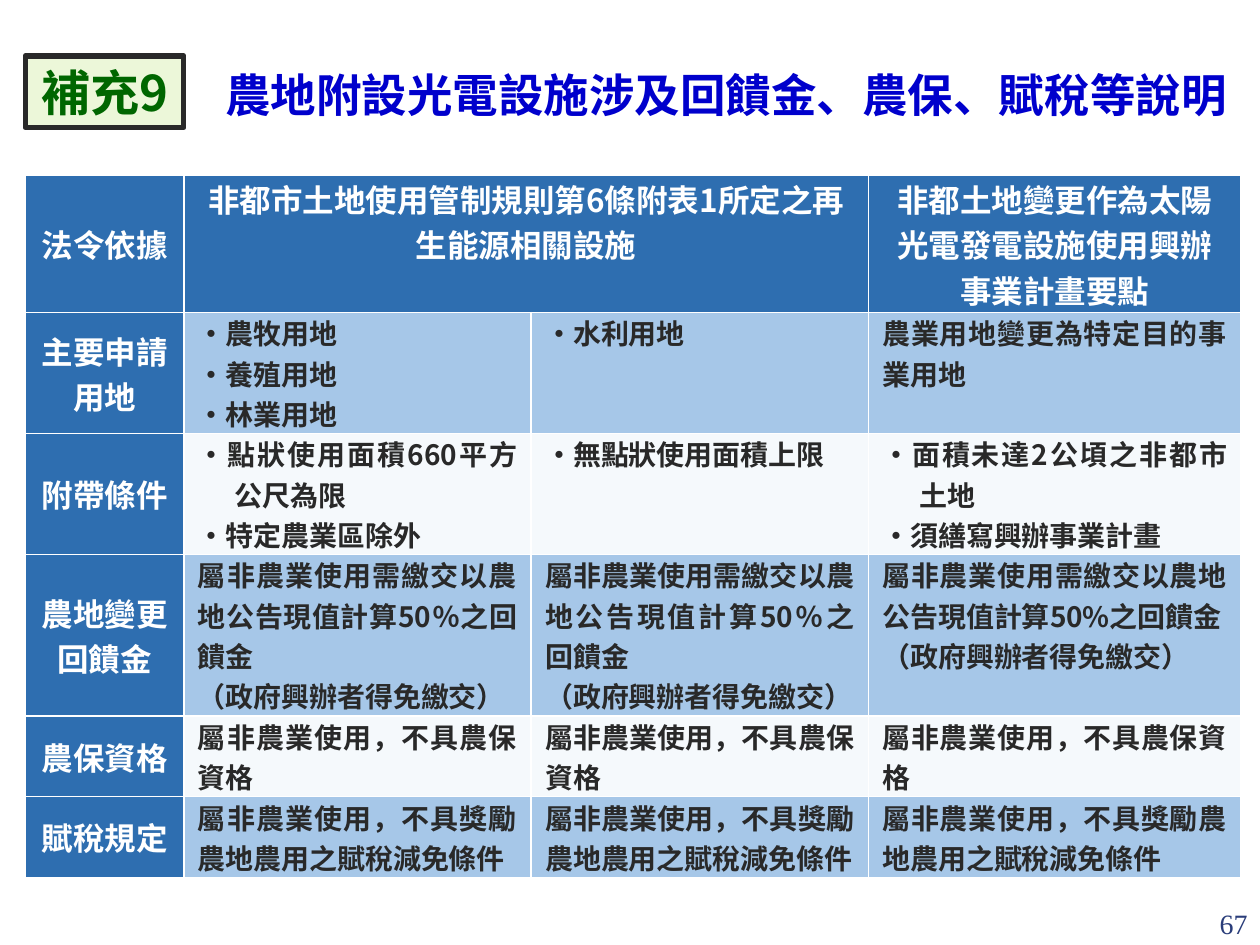
from pptx import Presentation
from pptx.dml.color import RGBColor
from pptx.enum.shapes import MSO_SHAPE
from pptx.enum.text import MSO_ANCHOR as ANCHOR, PP_ALIGN as ALIGN
from pptx.oxml.ns import qn
from pptx.util import Pt
from lxml.etree import SubElement

CJK, SERIF = "Noto Sans CJK SC", "Times New Roman"
WHITE = RGBColor(0xFF, 0xFF, 0xFF)
INK = RGBColor(0x29, 0x29, 0x29)
HEADER = RGBColor(0x2E, 0x6E, 0xB0)
BANDS = [RGBColor(0xF5, 0xF9, 0xFC), RGBColor(0xA6, 0xC7, 0xE8)]
TITLE = RGBColor(0x00, 0x00, 0xCC)
TAG_TEXT = RGBColor(0x00, 0x66, 0x00)
TAG_FILL = RGBColor(0xEC, 0xF7, 0xD9)
NUMBER = RGBColor(0x2A, 0x3D, 0x7A)

FEE = "屬非農業使用需繳交以農地公告現值計算{}之回饋金\n（政府興辦者得免繳交）"
INSURANCE = "屬非農業使用，不具農保資格"
TAX = "屬非農業使用，不具獎勵農地農用之賦稅減免條件"
ROWS = [
    ["法令依據", "非都市土地使用管制規則第6條附表1所定之再生能源相關設施", "",
     "非都土地變更作為太陽光電發電設施使用興辦事業計畫要點"],
    ["主要申請用地", "‧農牧用地\n‧養殖用地\n‧林業用地", "‧水利用地",
     "農業用地變更為特定目的事業用地"],
    ["附帶條件", "‧點狀使用面積660平方公尺為限\n‧特定農業區除外",
     "‧無點狀使用面積上限", "‧面積未達2公頃之非都市土地\n‧須繕寫興辦事業計畫"],
    ["農地變更回饋金", FEE.format("50％"), FEE.format("50％"), FEE.format("50%")],
    ["農保資格"] + [INSURANCE] * 3,
    ["賦稅規定"] + [TAX] * 3,
]
COL_WIDTHS = [90.7, 198.5, 192.7, 213]
ROW_HEIGHTS = [77.1, 69.1, 69.1, 92.1, 46.1, 46.1]
HANGING = 21


def style(p, size, color, align, font=CJK, bold=True):
    p.alignment = align
    for r in p.runs:
        r.font.size, r.font.bold, r.font.name = Pt(size), bold, font
        r.font.color.rgb = color
        SubElement(r._r.get_or_add_rPr(), qn("a:ea")).set("typeface", font)


def add_borders(cell):
    tcPr = cell._tc.get_or_add_tcPr()
    for i, side in enumerate(("lnL", "lnR", "lnT", "lnB")):
        ln = tcPr.makeelement(qn(f"a:{side}"), {"w": str(Pt(1))})
        fill = SubElement(ln, qn("a:solidFill"))
        SubElement(fill, qn("a:srgbClr")).set("val", str(WHITE))
        tcPr.insert(i, ln)


def fill_cell(cell, text, row, col):
    is_header = row == 0 or col == 0
    cell.margin_left = cell.margin_right = Pt(8)
    cell.margin_top = cell.margin_bottom = 0
    cell.vertical_anchor = ANCHOR.MIDDLE if col == 0 else ANCHOR.TOP
    cell.fill.solid()
    cell.fill.fore_color.rgb = HEADER if is_header else BANDS[row % 2]
    add_borders(cell)
    cell.text_frame.text = text
    for p in cell.text_frame.paragraphs:
        if is_header:
            style(p, 18, WHITE, ALIGN.CENTER)
        else:
            style(p, 16, INK, ALIGN.JUSTIFY)
        if p.text.startswith("‧"):
            pPr = p._p.get_or_add_pPr()
            pPr.set("marL", str(Pt(HANGING)))
            pPr.set("indent", str(-Pt(HANGING)))


prs = Presentation()
prs.slide_width, prs.slide_height = Pt(720), Pt(540)
s = prs.slides.add_slide(prs.slide_layouts[5])

title = s.shapes.title
title.left, title.top, title.width, title.height = Pt(121.5), Pt(32), Pt(596), Pt(41)
tf = title.text_frame
tf.text = "農地附設光電設施涉及回饋金、農保、賦稅等說明"
tf.vertical_anchor = ANCHOR.BOTTOM
style(tf.paragraphs[0], 26, TITLE, ALIGN.LEFT)

tag = s.shapes.add_shape(MSO_SHAPE.RECTANGLE, Pt(14.4), Pt(32), Pt(90.7), Pt(41))
tag.shadow.inherit = False
tag.fill.solid()
tag.fill.fore_color.rgb = TAG_FILL
tag.line.color.rgb, tag.line.width = INK, Pt(3)
tf = tag.text_frame
tf.text = "補充9"
tf.word_wrap, tf.vertical_anchor = True, ANCHOR.TOP
style(tf.paragraphs[0], 28, TAG_TEXT, ALIGN.CENTER)

table = s.shapes.add_table(len(ROWS), len(COL_WIDTHS), Pt(14.4), Pt(100.4),
                           Pt(sum(COL_WIDTHS)), Pt(sum(ROW_HEIGHTS))).table
for column, width in zip(table.columns, COL_WIDTHS):
    column.width = Pt(width)
for r, (texts, height) in enumerate(zip(ROWS, ROW_HEIGHTS)):
    table.rows[r].height = Pt(height)
    for c, text in enumerate(texts):
        fill_cell(table.cell(r, c), text, r, c)
table.cell(0, 1).merge(table.cell(0, 2))

number = s.shapes.add_textbox(Pt(648), Pt(505), Pt(72), Pt(36))
tf = number.text_frame
tf.text = "67"
tf.word_wrap, tf.vertical_anchor = True, ANCHOR.BOTTOM
style(tf.paragraphs[0], 16, NUMBER, ALIGN.RIGHT, SERIF, False)

prs.save("out.pptx")
